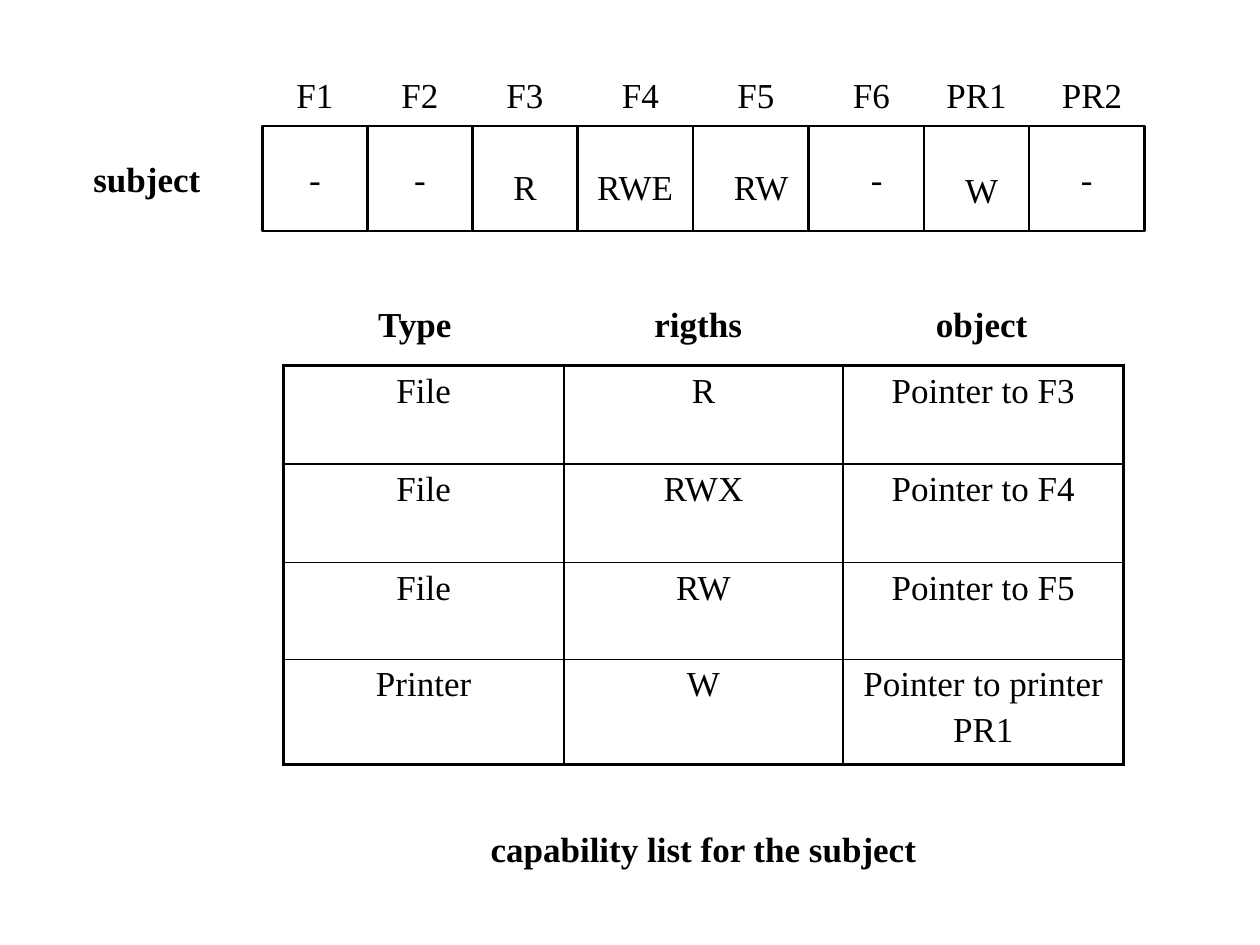
from dataclasses import dataclass

from lxml import etree
from pptx import Presentation
from pptx.dml.color import RGBColor
from pptx.enum.shapes import MSO_CONNECTOR, MSO_SHAPE
from pptx.enum.text import MSO_ANCHOR, PP_ALIGN
from pptx.oxml.ns import qn
from pptx.util import Pt

STRAIGHT = MSO_CONNECTOR.STRAIGHT
RECTANGLE = MSO_SHAPE.RECTANGLE
TOP = MSO_ANCHOR.TOP
CENTER = PP_ALIGN.CENTER
BLANK_LAYOUT = 6
EMU_PER_PX = 7620


@dataclass(frozen=True)
class Theme:
    ink: str = "000000"
    font: str = "Times New Roman"
    size: int = 20
    paragraph_gap: int = 4
    box_line: float = 1.5
    inner_line: float = 1
    outer_line: float = 2.25


@dataclass(frozen=True)
class Label:
    text: str
    x: int
    y: int
    w: int
    bold: bool = False


@dataclass(frozen=True)
class Access:
    name: str
    rights: str
    x: int
    w: int
    y: int


THEME = Theme()
INK = RGBColor.from_string(THEME.ink)
LABEL_H = 52
NAME_Y, NAME_W = 60, 100
ROW_TOP, ROW_BOTTOM = 120, 220

ACCESS_ROW = [
    Access("F1", "-", 250, 100, 140),
    Access("F2", "-", 350, 100, 140),
    Access("F3", "R", 450, 100, 148),
    Access("F4", "RWE", 550, 110, 148),
    Access("F5", "RW", 670, 110, 148),
    Access("F6", "-", 780, 110, 140),
    Access("PR1", "W", 880, 110, 150),
    Access("PR2", "-", 980, 110, 140),
]
EDGES = [250, 350, 450, 550, 660, 770, 880, 980, 1090]

HEADINGS = ["Type", "rigths", "object"]
HEADING_X, HEADING_Y, HEADING_W, HEADING_STEP = 270, 278, 250, 270

TABLE_X, TABLE_Y = 270, 348
COL_WIDTHS = [267, 266, 267]
ROW_HEIGHTS = [94, 94, 92, 100]
CAPABILITIES = [
    ("File", "R", "Pointer to F3"),
    ("File", "RWX", "Pointer to F4"),
    ("File", "RW", "Pointer to F5"),
    ("Printer", "W", "Pointer to printer\nPR1"),
]


def px(*lengths: int) -> list[int]:
    return [n * EMU_PER_PX for n in lengths]


def apply(target, values: dict) -> None:
    for name, value in values.items():
        setattr(target, name, value)


def write(tf, text: str, bold: bool = False) -> None:
    for i, line in enumerate(text.split("\n")):
        p = tf.add_paragraph() if i else tf.paragraphs[0]
        p.alignment = CENTER
        if i:
            p.space_before = Pt(THEME.paragraph_gap)
        r = p.add_run()
        r.text = line
        apply(r.font, {"name": THEME.font, "size": Pt(THEME.size), "bold": bold})
        r.font.color.rgb = INK


def add_label(shapes, label: Label) -> None:
    sp = shapes.add_textbox(*px(label.x, label.y, label.w, LABEL_H))
    margin_top, margin_bottom = px(10, 4)
    apply(sp.text_frame, {"word_wrap": True, "vertical_anchor": TOP,
                          "margin_top": margin_top, "margin_bottom": margin_bottom})
    write(sp.text_frame, label.text, label.bold)


def set_line(line) -> None:
    line.color.rgb = INK
    line.width = Pt(THEME.box_line)


def add_access_grid(shapes) -> None:
    left, right = EDGES[0], EDGES[-1]
    sp = shapes.add_shape(RECTANGLE, *px(left, ROW_TOP, right - left, ROW_BOTTOM - ROW_TOP))
    sp.shadow.inherit = False
    sp.fill.background()
    set_line(sp.line)
    for x in EDGES[1:-1]:
        divider = shapes.add_connector(STRAIGHT, *px(x, ROW_TOP, x, ROW_BOTTOM))
        set_line(divider.line)
        etree.SubElement(divider.element.spPr, qn("a:effectLst"))


def set_borders(cell, outer: dict[str, bool]) -> None:
    tc_pr = cell._tc.get_or_add_tcPr()
    for side, is_outer in outer.items():
        width = Pt(THEME.outer_line if is_outer else THEME.inner_line)
        ln = etree.SubElement(tc_pr, qn(f"a:ln{side}"), w=str(int(width)))
        fill = etree.SubElement(ln, qn("a:solidFill"))
        etree.SubElement(fill, qn("a:srgbClr"), val=THEME.ink)


def add_capability_table(shapes) -> None:
    n_rows, n_cols = len(ROW_HEIGHTS), len(COL_WIDTHS)
    frame = shapes.add_table(n_rows, n_cols,
                             *px(TABLE_X, TABLE_Y, sum(COL_WIDTHS), sum(ROW_HEIGHTS)))
    table = frame.table
    apply(table, {"first_row": False, "horz_banding": False})
    for col, width in zip(table.columns, px(*COL_WIDTHS)):
        col.width = width
    for row, height in zip(table.rows, px(*ROW_HEIGHTS)):
        row.height = height
    for i, texts in enumerate(CAPABILITIES):
        for j, text in enumerate(texts):
            cell = table.cell(i, j)
            set_borders(cell, {"L": j == 0, "R": j == n_cols - 1,
                               "T": i == 0, "B": i == n_rows - 1})
            cell.fill.background()
            write(cell.text_frame, text)


def main() -> None:
    prs = Presentation()
    prs.slide_width, prs.slide_height = px(1200, 900)
    s = prs.slides.add_slide(prs.slide_layouts[BLANK_LAYOUT])

    add_access_grid(s.shapes.add_group_shape().shapes)
    for access, right in zip(ACCESS_ROW, EDGES[1:]):
        add_label(s.shapes, Label(access.name, right - NAME_W, NAME_Y, NAME_W))
        add_label(s.shapes, Label(access.rights, access.x, access.y, access.w))
    add_label(s.shapes, Label("subject", 20, 140, 240, True))

    add_capability_table(s.shapes)
    headings = s.shapes.add_group_shape().shapes
    for i, text in enumerate(HEADINGS):
        x = HEADING_X + i * HEADING_STEP
        add_label(headings, Label(text, x, HEADING_Y, HEADING_W, True))
    add_label(s.shapes, Label("capability list for the subject", 290, 778, 760, True))

    prs.save("out.pptx")


if __name__ == "__main__":
    main()
